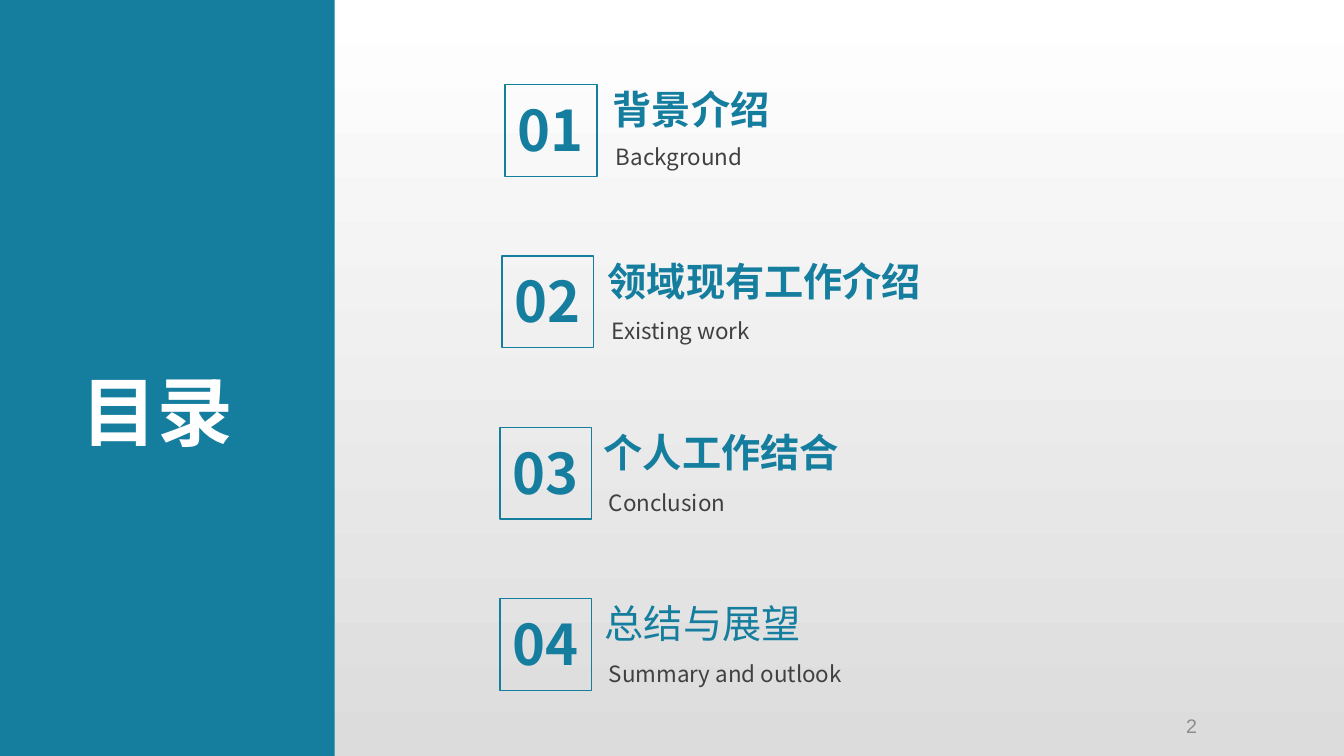
"""Build the table of contents slide with four numbered sections."""
from dataclasses import dataclass

from lxml.etree import SubElement
from pptx import Presentation
from pptx.dml.color import RGBColor
from pptx.enum.shapes import MSO_SHAPE as Shape
from pptx.enum.text import MSO_ANCHOR as Anchor, MSO_AUTO_SIZE as AutoSize, PP_ALIGN as Align
from pptx.oxml.ns import qn
from pptx.util import Inches, Pt


@dataclass(frozen=True)
class Section:
    title: str
    subtitle: str
    box_left: float
    title_left: float
    subtitle_left: float
    subtitle_drop: float = 0.56
    subtitle_width: float = 2.62
    title_width: float = 2.62
    bold: bool = True


HEADING = "目录"
PAGE_NUMBER = "2"
SECTIONS = [
    Section("背景介绍", "Background", 5.01, 5.98, 6.01, subtitle_drop=0.53),
    Section("领域现有工作介绍", "Existing work", 4.98, 5.93, 5.97, title_width=7.17),
    Section("个人工作结合", "Conclusion", 4.96, 5.89, 5.94),
    Section("总结与展望", "Summary and outlook", 4.96, 5.9, 5.94, subtitle_width=2.87, bold=False),
]


@dataclass(frozen=True)
class Theme:
    font: str = "Noto Sans CJK SC"
    number_font: str = "Arial"
    accent: str = "157E9F"
    white: str = "FFFFFF"
    background_end: str = "DCDCDC"
    body: str = "404040"
    muted: str = "8C8C8C"
    heading_size: int = 54
    index_size: int = 40
    title_size: int = 28
    subtitle_size: int = 16
    page_size: int = 14


THEME = Theme()
FIRST_TOP = 0.84
PITCH = 1.7
BOX_SIDE = 0.91


def color(value):
    return RGBColor.from_string(value)


def add_text(shapes, area, text, size, ink, font=THEME.font, bold=False,
             align=Align.LEFT, wrap=True, grow=True, anchor=Anchor.TOP):
    frame = shapes.add_textbox(*map(Inches, area)).text_frame
    frame.word_wrap = wrap
    frame.auto_size = AutoSize.SHAPE_TO_FIT_TEXT if grow else AutoSize.NONE
    frame.vertical_anchor = anchor
    paragraph = frame.paragraphs[0]
    paragraph.alignment = align
    run = paragraph.add_run()
    run.text = text
    run.font.size = Pt(size)
    run.font.bold = bold
    run.font.color.rgb = color(ink)
    run.font.name = font
    SubElement(run.font._element, qn("a:ea"), typeface=font)


def add_rectangle(shapes, area):
    rectangle = shapes.add_shape(Shape.RECTANGLE, *map(Inches, area))
    rectangle.shadow.inherit = False
    return rectangle


def add_section(slide, index, section):
    shapes = slide.shapes.add_group_shape().shapes
    top = FIRST_TOP + index * PITCH
    add_text(shapes, (section.title_left, top - 0.04, section.title_width, 0.57),
             section.title, THEME.title_size, THEME.accent, bold=section.bold)
    add_text(shapes, (section.box_left, top + 0.06, BOX_SIDE, 0.77),
             f"{index + 1:02}", THEME.index_size, THEME.accent, bold=True, align=Align.CENTER)
    box = add_rectangle(shapes, (section.box_left, top, BOX_SIDE, BOX_SIDE))
    box.fill.background()
    box.line.color.rgb = color(THEME.accent)
    box.line.width = Pt(1)
    add_text(shapes, (section.subtitle_left, top + section.subtitle_drop, section.subtitle_width, 0.37),
             section.subtitle, THEME.subtitle_size, THEME.body)


def add_background(slide):
    fill = slide.background.fill
    fill.gradient()
    fill.gradient_angle = 270
    for stop, value in zip(fill.gradient_stops, (THEME.white, THEME.background_end)):
        stop.color.rgb = color(value)


def main():
    presentation = Presentation()
    presentation.slide_width = Inches(13.33)
    presentation.slide_height = Inches(7.5)
    slide = presentation.slides.add_slide(presentation.slide_layouts[6])
    add_background(slide)

    panel = add_rectangle(slide.shapes, (0, 0, 3.32, 7.5))
    panel.fill.solid()
    panel.fill.fore_color.rgb = color(THEME.accent)
    panel.line.fill.background()
    add_text(slide.shapes, (0.71, 3.57, 1.72, 1.01), HEADING,
             THEME.heading_size, THEME.white, bold=True, wrap=False)

    for index, section in enumerate(SECTIONS):
        add_section(slide, index, section)

    add_text(slide.shapes, (9.02, 7.02, 2.95, 0.35), PAGE_NUMBER, THEME.page_size, THEME.muted,
             font=THEME.number_font, align=Align.RIGHT, grow=False, anchor=Anchor.MIDDLE)
    presentation.save("out.pptx")


if __name__ == "__main__":
    main()
